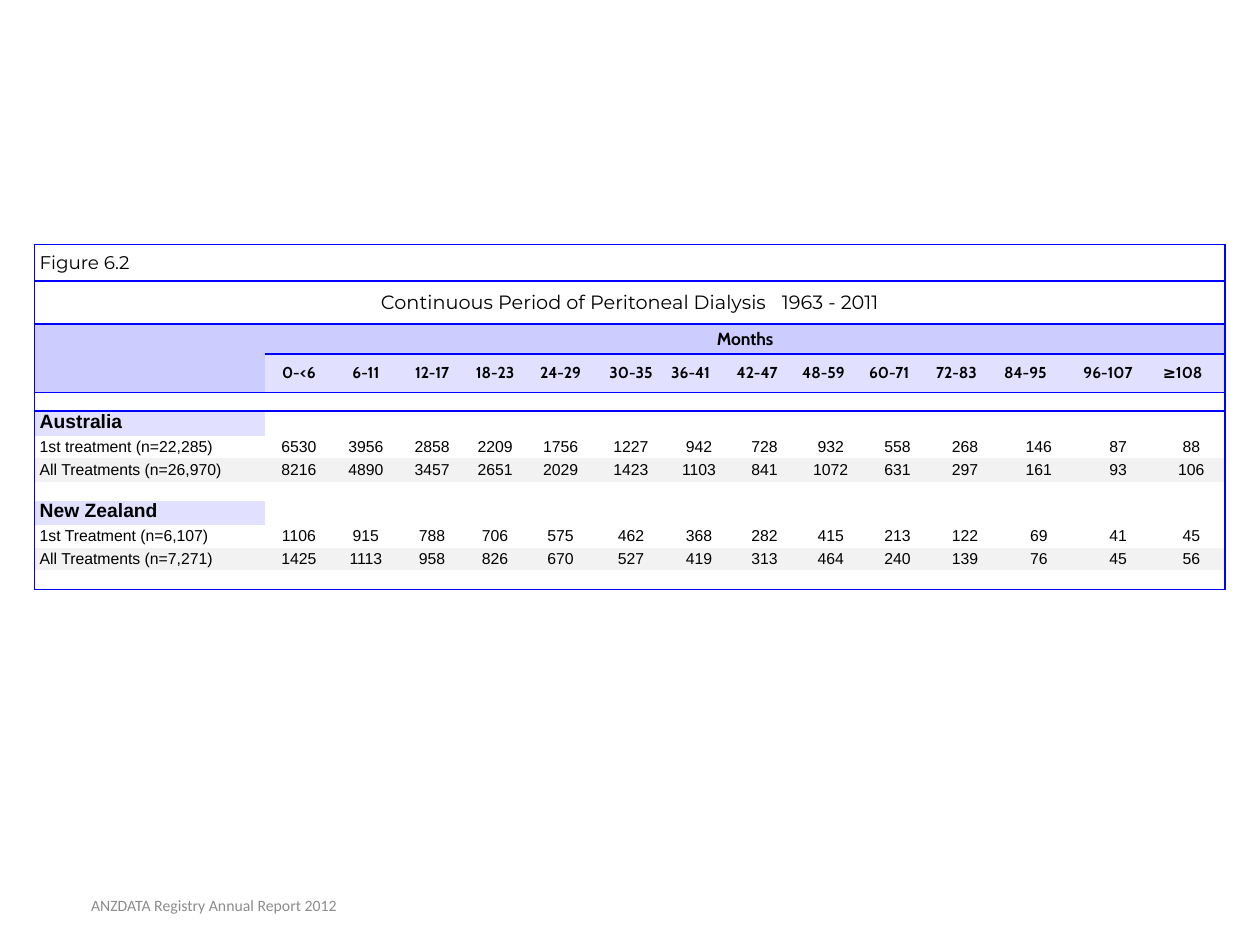
from lxml.etree import SubElement
from pptx import Presentation
from pptx.dml.color import RGBColor
from pptx.enum.text import MSO_ANCHOR, PP_ALIGN
from pptx.oxml.ns import qn
from pptx.util import Cm, Pt

BLUE = RGBColor(0x00, 0x00, 0xFF)
BLACK = RGBColor(0x00, 0x00, 0x00)
LILAC = RGBColor(0xCC, 0xCC, 0xFF)
PALE = RGBColor(0xE1, 0xE1, 0xFF)
LIGHT = RGBColor(0xF2, 0xF2, 0xF2)
GREY = RGBColor(0x8C, 0x8C, 0x8C)
PLAIN = "{2D5ABB26-0587-4C30-8999-92F81FD0307C}"

WIDTHS = [4.65, 1.35, 1.35, 1.32, 1.22, 1.42, 1.42, 1.32,
          1.32, 1.35, 1.35, 1.37, 1.6, 1.6, 1.35]
HEIGHTS = [0.73, 0.87, 0.61, 0.77, 0.38, 0.49, 0.46, 0.47,
           0.38, 0.49, 0.46, 0.46, 0.38]
MONTHS = ["0-<6", "6-11", "12-17", "18-23", "24-29", "30-35", "36-41",
          "42-47", "48-59", "60-71", "72-83", "84-95", "96-107", "≥108"]
COUNTS = {
    6: ("1st treatment (n=22,285)", [6530, 3956, 2858, 2209, 1756, 1227, 942,
                                     728, 932, 558, 268, 146, 87, 88]),
    7: ("All Treatments (n=26,970)", [8216, 4890, 3457, 2651, 2029, 1423, 1103,
                                      841, 1072, 631, 297, 161, 93, 106]),
    10: ("1st Treatment (n=6,107)", [1106, 915, 788, 706, 575, 462, 368,
                                     282, 415, 213, 122, 69, 41, 45]),
    11: ("All Treatments (n=7,271)", [1425, 1113, 958, 826, 670, 527, 419,
                                      313, 464, 240, 139, 76, 45, 56]),
}
RULES = {0, 1, 2, 3, 4, len(HEIGHTS)}  # row boundaries that carry a line


def edge(cell, side):
    """Draw a blue line on one side (L, R, T or B) of the cell."""
    line = SubElement(cell._tc.get_or_add_tcPr(), qn(f"a:ln{side}"), w=str(Pt(1)))
    fill = SubElement(line, qn("a:solidFill"))
    SubElement(fill, qn("a:srgbClr"), val=str(BLUE))


def write(cell, text, size, font="Arial", bold=False, align=PP_ALIGN.LEFT):
    para = cell.text_frame.paragraphs[0]
    para.text = text
    para.alignment = align
    for run in para.runs:
        run.font.size = Pt(size)
        run.font.name = font
        run.font.bold = bold
        run.font.color.rgb = BLACK
    return para


deck = Presentation()
deck.slide_width, deck.slide_height = Cm(25.4), Cm(19.05)
slide = deck.slides.add_slide(deck.slide_layouts[6])

frame = slide.shapes.add_table(len(HEIGHTS), len(WIDTHS), Cm(0.7), Cm(4.93),
                               Cm(sum(WIDTHS)), Cm(sum(HEIGHTS)))
table = frame.table
table.first_row = table.horz_banding = False
table._tbl.tblPr.find(qn("a:tableStyleId")).text = PLAIN
for col, width in zip(table.columns, WIDTHS):
    col.width = Cm(width)
for row, height in zip(table.rows, HEIGHTS):
    row.height = Cm(height)

last = len(WIDTHS) - 1
table.cell(0, 0).merge(table.cell(0, last))
table.cell(1, 0).merge(table.cell(1, last))
table.cell(2, 0).merge(table.cell(3, 0))
table.cell(2, 1).merge(table.cell(2, last))

# Text
write(table.cell(0, 0), "Figure 6.2", 10.5, "Montserrat")
title = write(table.cell(1, 0), "Continuous Period of Peritoneal Dialysis", 11,
              "Montserrat", align=PP_ALIGN.CENTER)
for part in (" ", "1963 - 2011"):
    run = title.add_run()
    run.text = part
    run.font.size = Pt(11)
    run.font.name = "Montserrat"
    run.font.color.rgb = BLACK
title.runs[1].font._element.set("spc", "600")  # wide gap before the years
write(table.cell(2, 1), "Months", 10, "Cabin", True, PP_ALIGN.CENTER)
for c, span in enumerate(MONTHS, 1):
    write(table.cell(3, c), span, 9, "Cabin", True,
          PP_ALIGN.CENTER if c < 7 else PP_ALIGN.LEFT)
for r, land in ((5, "Australia"), (9, "New Zealand")):
    write(table.cell(r, 0), land, 11, bold=True).line_spacing = 0.75
for r, (label, counts) in COUNTS.items():
    write(table.cell(r, 0), label, 9).space_after = Pt(14)
    for c, count in enumerate(counts, 1):
        para = write(table.cell(r, c), str(count), 9, align=PP_ALIGN.CENTER)
        para.space_after = Pt(14)

# Lines, fills and margins
for r in range(len(HEIGHTS)):
    for c in range(len(WIDTHS)):
        cell = table.cell(r, c)
        foot = r + cell.span_height
        if c == 0:
            edge(cell, "L")
        if c + cell.span_width > last:
            edge(cell, "R")
        if r in RULES and (r, c) != (3, 0):
            edge(cell, "T")
        if foot in RULES and (foot, c) != (3, 0):
            edge(cell, "B")

        if r == 2 or (r, c) == (3, 0):
            shade = LILAC
        elif r == 3 or (c == 0 and r in (5, 9)):
            shade = PALE
        elif r in (7, 11):
            shade = LIGHT
        else:
            shade = None
        if shade is None:
            cell.fill.background()
        else:
            cell.fill.solid()
            cell.fill.fore_color.rgb = shade

        cell.vertical_anchor = MSO_ANCHOR.MIDDLE
        cell.margin_left = cell.margin_right = Cm(0.1)
        cell.margin_top = cell.margin_bottom = Cm(0.05)
        para = cell.text_frame.paragraphs[0]
        if not para.runs:  # keeps empty cells from stretching their row
            SubElement(para._p, qn("a:endParaRPr"), sz="500")

# Footer
box = slide.shapes.add_textbox(Cm(0.5), Cm(17.73), Cm(7.62), Cm(1.02))
text = box.text_frame
text.word_wrap = True
text.vertical_anchor = MSO_ANCHOR.MIDDLE
text.text = "ANZDATA Registry Annual Report 2012"
para = text.paragraphs[0]
para.alignment = PP_ALIGN.CENTER
font = para.runs[0].font
font.size, font.name, font.color.rgb = Pt(9), "Calibri", GREY

deck.save("out.pptx")
